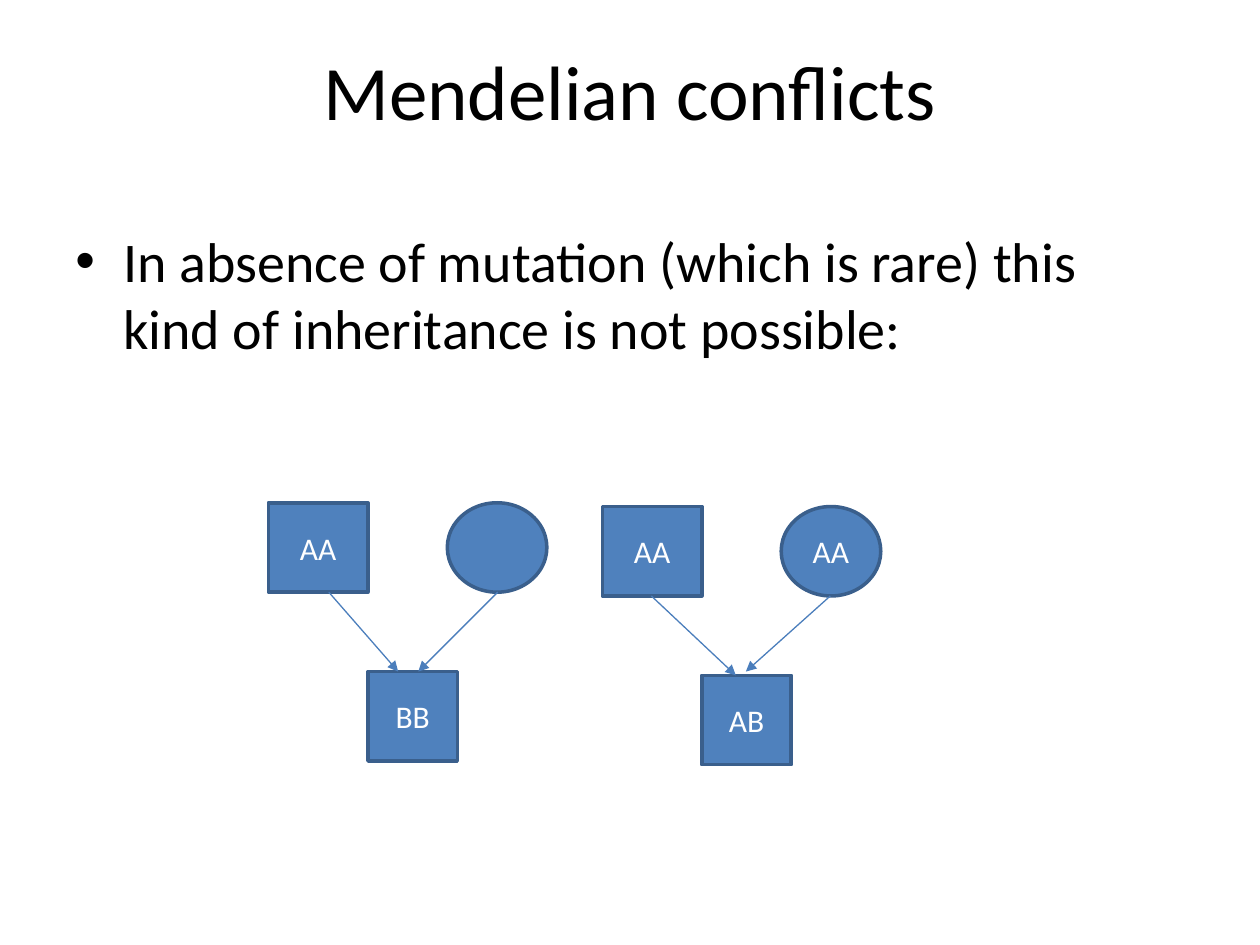
from dataclasses import dataclass

import pptx
import pptx.dml.color
import pptx.enum.shapes
import pptx.enum.text
import pptx.oxml.ns
import pptx.util
from lxml import etree

Inches, Pt = pptx.util.Inches, pptx.util.Pt
Shape = pptx.enum.shapes.MSO_SHAPE
Anchor = pptx.enum.text.MSO_ANCHOR
Align = pptx.enum.text.PP_ALIGN
qn = pptx.oxml.ns.qn

COLORS = {"text": "000000", "fill": "4F81BD", "outline": "3A5F8C",
          "arrow": "4B7EBC", "label": "FFFFFF"}
FONT = "Calibri"
PARENT_W, PARENT_H, CHILD = 0.79, 0.71, 0.71
MOTHER_DX, CHILD_DX, CHILD_DY = 1.42, 0.79, 1.34


@dataclass
class Trio:
    """A father, mother and child; arrows are offsets from left and top."""
    left: float
    top: float
    father: str
    mother: str
    child: str
    arrows: tuple


TRIOS = [
    Trio(2.13, 3.99, "AA", "", "BB",
         ((0.48, 0.71, 1.03, 1.34), (1.82, 0.71, 1.19, 1.34))),
    Trio(4.78, 4.02, "AA", "AA", "AB",
         ((0.39, 0.71, 1.06, 1.34), (1.81, 0.71, 1.14, 1.31))),
]


def rgb(name: str) -> pptx.dml.color.RGBColor:
    return pptx.dml.color.RGBColor.from_string(COLORS[name])


def write(tf, text: str, size: float, color: str, align) -> None:
    tf.word_wrap = True
    p = tf.paragraphs[0]
    p.alignment = align
    r = p.add_run()
    r.text = text
    for name, value in {"name": FONT, "size": Pt(size)}.items():
        setattr(r.font, name, value)
    r.font.color.rgb = rgb(color)


def place(sp, left: float, top: float, width: float, height: float) -> None:
    box = {"left": left, "top": top, "width": width, "height": height}
    for name, value in box.items():
        setattr(sp, name, Inches(value))


def add_person(shapes, kind, left: float, top: float, width: float,
               height: float, label: str) -> None:
    sp = shapes.add_shape(kind, Inches(left), Inches(top), Inches(width), Inches(height))
    sp.shadow.inherit = False
    sp.fill.solid()
    sp.fill.fore_color.rgb = rgb("fill")
    sp.line.color.rgb = rgb("outline")
    sp.line.width = Pt(2)
    if label:
        sp.text_frame.vertical_anchor = Anchor.MIDDLE
        write(sp.text_frame, label, 18, "label", Align.CENTER)


def add_arrow(shapes, x1: float, y1: float, x2: float, y2: float) -> None:
    line = shapes.add_connector(pptx.enum.shapes.MSO_CONNECTOR.STRAIGHT,
                                Inches(x1), Inches(y1), Inches(x2), Inches(y2))
    line.line.color.rgb = rgb("arrow")
    line.line.width = Pt(0.75)
    etree.SubElement(line.line._get_or_add_ln(), qn("a:tailEnd"), type="triangle")
    etree.SubElement(line._element.spPr, qn("a:effectLst"))


def add_trio(s, trio: Trio) -> None:
    shapes = s.shapes.add_group_shape().shapes
    x, y = trio.left, trio.top
    add_person(shapes, Shape.RECTANGLE, x, y, PARENT_W, PARENT_H, trio.father)
    add_person(shapes, Shape.OVAL, x + MOTHER_DX, y, PARENT_W, PARENT_H, trio.mother)
    add_person(shapes, Shape.RECTANGLE, x + CHILD_DX, y + CHILD_DY, CHILD, CHILD, trio.child)
    for x1, y1, x2, y2 in trio.arrows:
        add_arrow(shapes, x + x1, y + y1, x + x2, y + y2)


def add_bullet(p, indent: float) -> None:
    pPr = p._p.get_or_add_pPr()
    pPr.set("marL", str(Inches(indent)))
    pPr.set("indent", str(-Inches(indent)))
    etree.SubElement(pPr, qn("a:buFont"), typeface="Arial")
    etree.SubElement(pPr, qn("a:buChar"), char="•")


def main() -> None:
    prs = pptx.Presentation()
    prs.slide_width, prs.slide_height = Inches(10), Inches(7.5)
    s = prs.slides.add_slide(prs.slide_layouts[5])

    # Title
    title = s.shapes.title
    place(title, 0.5, 0.28, 9, 0.87)
    title.text_frame.vertical_anchor = Anchor.MIDDLE
    write(title.text_frame, "Mendelian conflicts", 44, "text", Align.CENTER)

    # Bulleted statement
    body = s.shapes.add_textbox(Inches(0.5), Inches(1.75), Inches(9), Inches(1.21))
    write(body.text_frame,
          "In absence of mutation (which is rare) this kind of inheritance is not possible:",
          32, "text", Align.LEFT)
    add_bullet(body.text_frame.paragraphs[0], 0.38)

    # Family trios
    for trio in TRIOS:
        add_trio(s, trio)

    prs.save("out.pptx")


if __name__ == "__main__":
    main()
